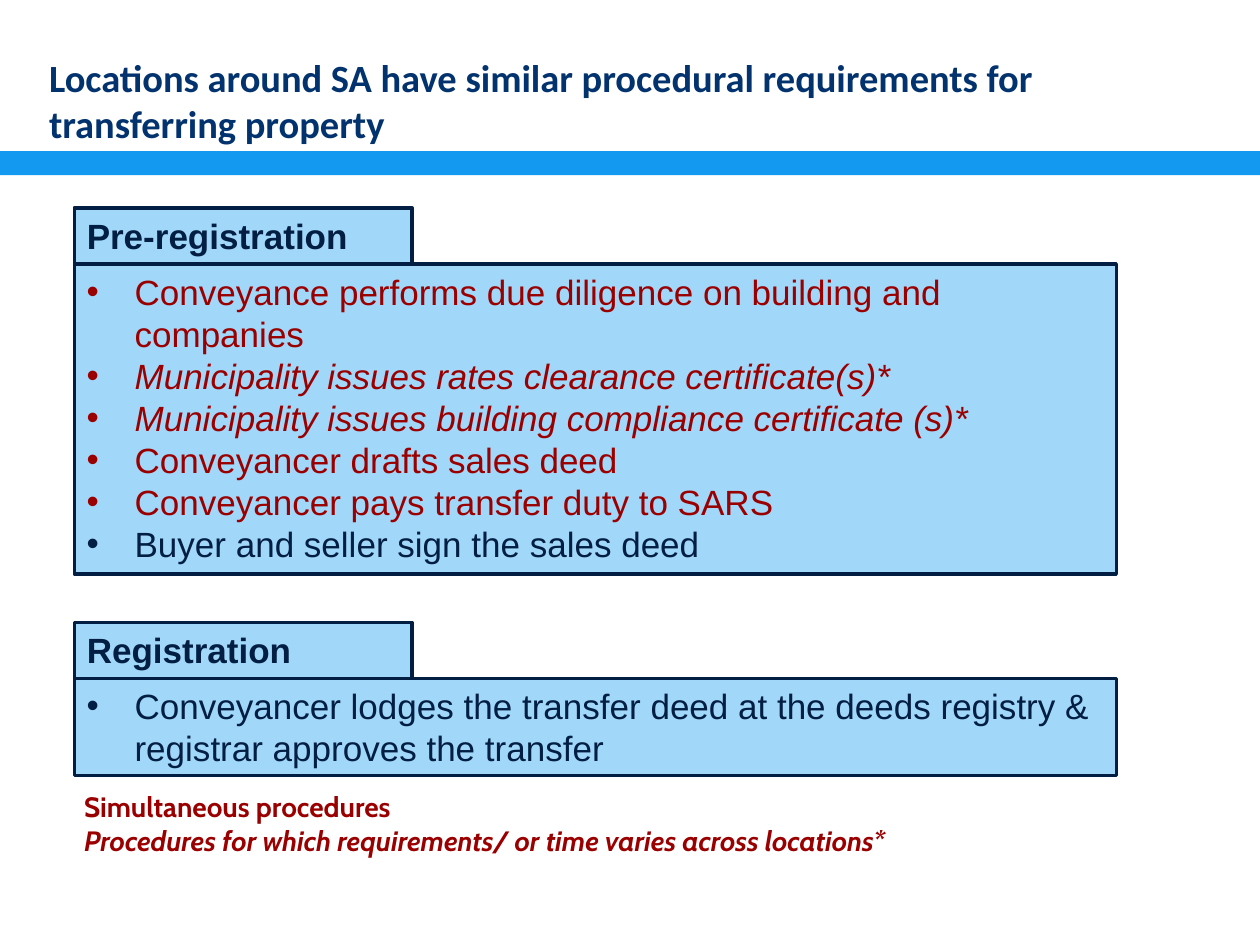
from dataclasses import dataclass

from lxml.etree import SubElement
from pptx import Presentation
from pptx.dml.color import RGBColor
from pptx.enum.shapes import MSO_SHAPE
from pptx.enum.text import MSO_ANCHOR, PP_ALIGN
from pptx.oxml.ns import qn
from pptx.util import Inches, Pt


@dataclass(frozen=True)
class Theme:
    title_color: str = "03336E"
    band: str = "139AF0"
    panel: str = "A1D7F9"
    ink: str = "021F43"
    accent: str = "9A0000"
    title_font: str = "Calibri"
    body_font: str = "Arial"
    note_font: str = "Cabin"
    title_size: int = 22
    body_size: int = 20
    note_size: int = 16
    outline: int = 2
    indent: float = 0.38


def add_bullet(para, indent):
    properties = para._p.get_or_add_pPr()
    properties.set("marL", str(Inches(indent)))
    properties.set("indent", str(-Inches(indent)))
    SubElement(properties, qn("a:buFont"), typeface="Arial")
    SubElement(properties, qn("a:buChar"), char="•")


def write(frame, text, *, font, size, color, bold=False, italic=False, bullet=None):
    """Write one paragraph, filling the frame's empty first one before adding more."""
    para = frame.paragraphs[0] if not frame.text else frame.add_paragraph()
    para.alignment = PP_ALIGN.LEFT
    if bullet:
        add_bullet(para, bullet)
    span = para.add_run()
    span.text = text
    span.font.name, span.font.size = font, Pt(size)
    span.font.bold, span.font.italic = bold, italic
    span.font.color.rgb = RGBColor.from_string(color)


class Page:
    """A slide on a grid of 100 columns by 75 rows."""

    def __init__(self, deck, theme):
        self.theme = theme
        self.column = deck.slide_width / 100
        self.row = deck.slide_height / 75
        self.shapes = deck.slides.add_slide(deck.slide_layouts[6]).shapes

    def place(self, left, top, width, height):
        return (round(left * self.column), round(top * self.row),
                round(width * self.column), round(height * self.row))

    def rectangle(self, *cells, fill, line=None):
        box = self.shapes.add_shape(MSO_SHAPE.RECTANGLE, *self.place(*cells))
        box.shadow.inherit = False
        box.fill.solid()
        box.fill.fore_color.rgb = RGBColor.from_string(fill)
        if line:
            box.line.color.rgb = RGBColor.from_string(line)
            box.line.width = Pt(self.theme.outline)
        else:
            box.line.fill.background()
        box.text_frame.word_wrap = True
        box.text_frame.vertical_anchor = MSO_ANCHOR.TOP
        return box.text_frame

    def text(self, *cells):
        frame = self.shapes.add_textbox(*self.place(*cells)).text_frame
        frame.word_wrap = True
        return frame

    def title(self, text):
        frame = self.text(3.9, 3.3, 92.5, 8.3)
        frame.vertical_anchor = MSO_ANCHOR.BOTTOM
        frame.margin_left = frame.margin_right = 0
        frame.margin_top = frame.margin_bottom = 0
        write(frame, text, font=self.theme.title_font, size=self.theme.title_size,
              color=self.theme.title_color, bold=True)

    def stage(self, top, height, heading, steps):
        """A heading tab sitting on a panel of bulleted steps."""
        theme, left, tab = self.theme, 5.9, 4.45
        style = dict(font=theme.body_font, size=theme.body_size)
        look = dict(fill=theme.panel, line=theme.ink)
        frame = self.rectangle(left, top, 26.8, tab, **look)
        write(frame, heading, color=theme.ink, bold=True, **style)
        frame = self.rectangle(left, top + tab, 82.7, height, **look)
        for text, color, italic in steps:
            write(frame, text, color=color, italic=italic,
                  bullet=theme.indent, **style)

    def legend(self, entries):
        frame = self.text(5.7, 62.2, 88.4, 6.4)
        for text, italic in entries:
            write(frame, text, font=self.theme.note_font, size=self.theme.note_size,
                  color=self.theme.accent, bold=True, italic=italic)


def main():
    deck = Presentation()
    deck.slide_width, deck.slide_height = Inches(10), Inches(7.5)
    theme = Theme()
    page = Page(deck, theme)

    # Header
    page.rectangle(0, 12, 100, 1.9, fill=theme.band)
    page.title("Locations around SA have similar procedural requirements "
               "for transferring property")

    # Stages: step, colour, italic where it varies across locations
    page.stage(16.5, 24.6, "Pre-registration", [
        ("Conveyance performs due diligence on building and companies",
         theme.accent, False),
        ("Municipality issues rates clearance certificate(s)*", theme.accent, True),
        ("Municipality issues building compliance certificate (s)*",
         theme.accent, True),
        ("Conveyancer drafts sales deed", theme.accent, False),
        ("Conveyancer pays transfer duty to SARS", theme.accent, False),
        ("Buyer and seller sign the sales deed", theme.ink, False),
    ])
    page.stage(49.4, 7.7, "Registration", [
        ("Conveyancer lodges the transfer deed at the deeds registry & "
         "registrar approves the transfer", theme.ink, False),
    ])

    # Legend
    page.legend([
        ("Simultaneous procedures", False),
        ("Procedures for which requirements/ or time varies across locations*", True),
    ])

    deck.save("out.pptx")


if __name__ == "__main__":
    main()
